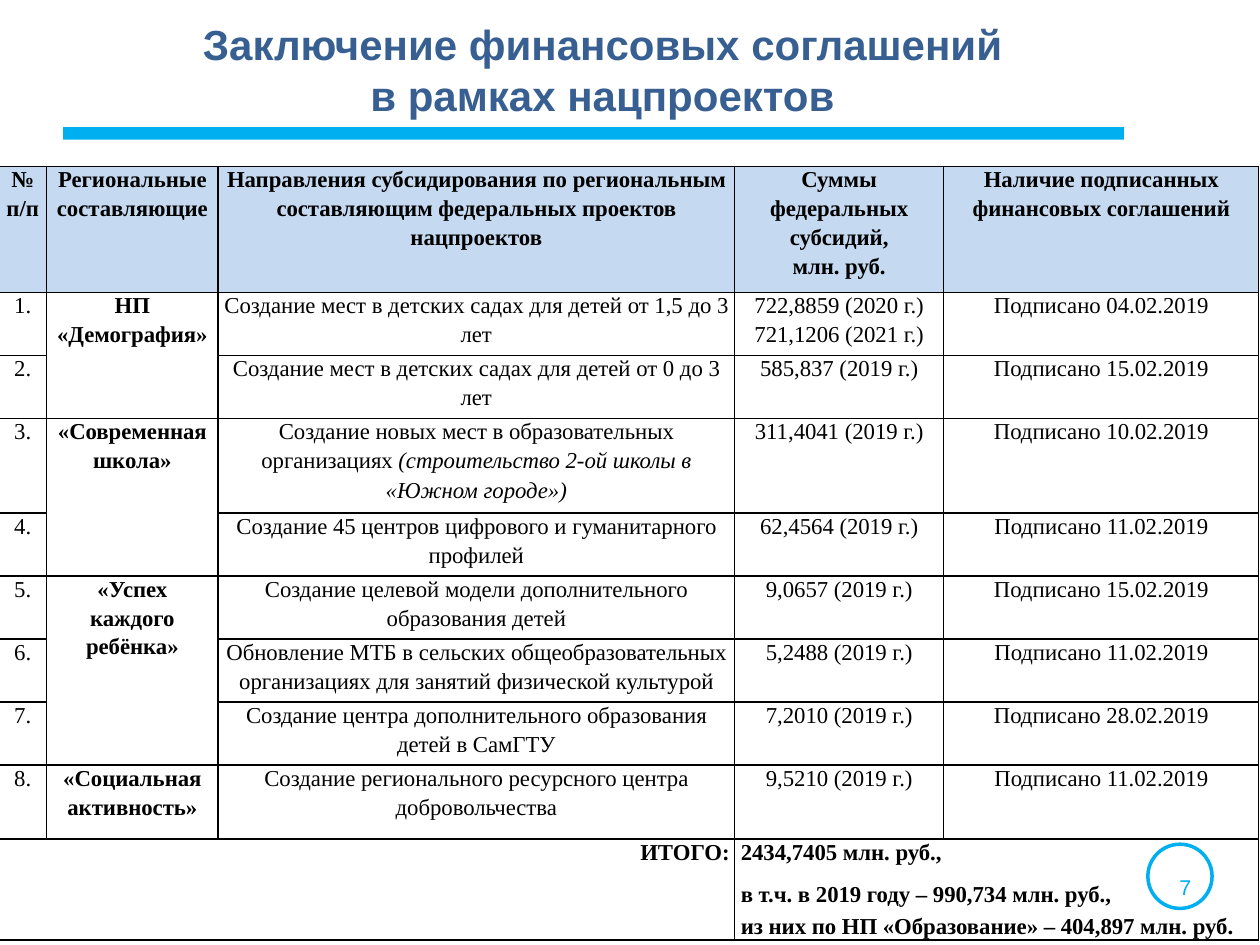
from lxml import etree
from pptx import Presentation
from pptx.dml.color import RGBColor
from pptx.enum.shapes import MSO_SHAPE
from pptx.enum.text import PP_ALIGN
from pptx.oxml.ns import qn
from pptx.util import Inches, Pt

RECTANGLE, OVAL = MSO_SHAPE.RECTANGLE, MSO_SHAPE.OVAL
LEFT, CENTER, RIGHT = PP_ALIGN.LEFT, PP_ALIGN.CENTER, PP_ALIGN.RIGHT
BLACK = RGBColor(0x00, 0x00, 0x00)
SKY = RGBColor(0x00, 0xAF, 0xEF)
NAVY = RGBColor(0x37, 0x5F, 0x92)
PALE_BLUE = RGBColor(0xC5, 0xD9, 0xF0)

COLUMN_WIDTHS = [0.38, 1.36, 4.1, 1.66, 2.5]
ROW_HEIGHTS = [1, 0.5, 0.5, 0.75, 0.5, 0.5, 0.5, 0.5, 0.59, 0.78]
HEADERS = [
    ["№", "п/п"],
    ["Региональные", "составляющие"],
    ["Направления субсидирования по региональным",
     "составляющим федеральных проектов\vнацпроектов"],
    ["Суммы", "федеральных\vсубсидий,\vмлн. руб."],
    ["Наличие подписанных", "финансовых соглашений"],
]
PROJECTS = [
    (1, 2, ["НП", "«Демография»"]),
    (3, 4, ["«Современная", "школа»"]),
    (5, 7, ["«Успех", "каждого\vребёнка»"]),
    (8, 8, ["«Социальная", "активность»"]),
]
AGREEMENTS = [
    (["Создание мест в детских садах для детей от 1,5 до 3", "лет"],
     ["722,8859 (2020 г.)", "721,1206 (2021 г.)"], "04.02.2019"),
    (["Создание мест в детских садах для детей от 0 до 3", "лет"],
     ["585,837 (2019 г.)"], "15.02.2019"),
    (["Создание новых мест в образовательных",
      "организациях _(строительство 2-ой школы в", "_«Южном городе»)"],
     ["311,4041 (2019 г.)"], "10.02.2019"),
    (["Создание 45 центров цифрового и гуманитарного", "профилей"],
     ["62,4564 (2019 г.)"], "11.02.2019"),
    (["Создание целевой модели дополнительного", "образования детей"],
     ["9,0657 (2019 г.)"], "15.02.2019"),
    (["Обновление МТБ в сельских общеобразовательных",
      "организациях для занятий физической культурой"],
     ["5,2488 (2019 г.)"], "11.02.2019"),
    (["Создание центра дополнительного образования", "детей в СамГТУ"],
     ["7,2010 (2019 г.)"], "28.02.2019"),
    (["Создание регионального ресурсного центра", "добровольчества"],
     ["9,5210 (2019 г.)"], "11.02.2019"),
]
TOTALS = [
    "2434,7405 млн. руб.,",
    "в т.ч. в 2019 году – 990,734 млн. руб.,\t",
    "из них по НП «Образование» – 404,897 млн. руб.",
]


def style_font(font, name, size, color, bold):
    font.name, font.size, font.bold = name, Pt(size), bold
    font.color.rgb = color


def add_decoration(page, kind, left, top, width, height):
    shape = page.shapes.add_shape(
        kind, Inches(left), Inches(top), Inches(width), Inches(height))
    shape.shadow.inherit = False
    shape.line.color.rgb = SKY
    return shape


def add_title(page, left, top, width, height):
    box = page.shapes.add_textbox(
        Inches(left), Inches(top), Inches(width), Inches(height))
    frame = box.text_frame
    frame.word_wrap = True
    frame.margin_left = frame.margin_right = frame.margin_bottom = 0
    frame.margin_top = Inches(0.01)
    para = frame.paragraphs[0]
    para.text = "Заключение финансовых соглашений в рамках нацпроектов"
    properties = para._p.get_or_add_pPr()
    properties.set("marL", str(Inches(1.35)))
    properties.set("indent", str(Inches(-1.33)))
    style_font(para.font, "Arial", 24, NAVY, True)


def add_border(cell):
    properties = cell._tc.get_or_add_tcPr()
    for side in ("a:lnL", "a:lnR", "a:lnT", "a:lnB"):
        line = etree.SubElement(properties, qn(side), w=str(Pt(1)))
        fill = etree.SubElement(line, qn("a:solidFill"))
        etree.SubElement(fill, qn("a:srgbClr"), val=str(BLACK))


def fill_cell(cell, lines, bold=False, align=CENTER, side_margin=0):
    cell.margin_left = cell.margin_right = Inches(side_margin)
    cell.margin_top, cell.margin_bottom = Inches(0.01), 0
    frame = cell.text_frame
    for index, line in enumerate(lines):
        para = frame.add_paragraph() if index else frame.paragraphs[0]
        para.alignment = align
        if index:
            para.space_before = Pt(2.4)
        if "\v" in line:
            para.line_spacing = 1.15
            para.space_before = Pt(0.1)
        if "_" in line:
            plain, italic = line.split("_")
            if plain:
                para.add_run().text = plain
            span = para.add_run()
            span.text = italic
            span.font.italic = True
        else:
            para.text = line
        style_font(para.font, "Times New Roman", 13, BLACK, bold)


def add_page_number(para):
    properties = para._p.get_or_add_pPr()
    tabs = etree.Element(qn("a:tabLst"))
    etree.SubElement(tabs, qn("a:tab"), pos=str(Inches(3.48)), algn="l")
    properties.find(qn("a:defRPr")).addprevious(tabs)
    span = para.add_run()
    span.text = "7"
    style_font(span.font, "Arial", 21, SKY, False)
    span._r.get_or_add_rPr().set("baseline", "20000")


def add_agreement_table(page, left, top):
    frame = page.shapes.add_table(
        len(ROW_HEIGHTS), len(COLUMN_WIDTHS), Inches(left), Inches(top),
        Inches(sum(COLUMN_WIDTHS)), Inches(sum(ROW_HEIGHTS)))
    table = frame.table
    table.first_row = table.horz_banding = False
    for column, width in zip(table.columns, COLUMN_WIDTHS):
        column.width = Inches(width)
    for row, height in zip(table.rows, ROW_HEIGHTS):
        row.height = Inches(height)
    for cell in table.iter_cells():
        add_border(cell)
        cell.fill.background()

    for index, lines in enumerate(HEADERS):
        cell = table.cell(0, index)
        cell.fill.solid()
        cell.fill.fore_color.rgb = PALE_BLUE
        fill_cell(cell, lines, bold=True)
    for first, last, lines in PROJECTS:
        if last > first:
            table.cell(first, 1).merge(table.cell(last, 1))
        fill_cell(table.cell(first, 1), lines, bold=True)
    for number, (purpose, sums, date) in enumerate(AGREEMENTS, 1):
        fill_cell(table.cell(number, 0), [f"{number}."])
        fill_cell(table.cell(number, 2), purpose)
        fill_cell(table.cell(number, 3), sums)
        fill_cell(table.cell(number, 4), [f"Подписано {date}"])

    bottom = len(ROW_HEIGHTS) - 1
    label, total = table.cell(bottom, 0), table.cell(bottom, 3)
    label.merge(table.cell(bottom, 2))
    total.merge(table.cell(bottom, 4))
    fill_cell(label, ["ИТОГО:"], True, RIGHT, 0.04)
    fill_cell(total, TOTALS, True, LEFT, 0.05)
    add_page_number(total.text_frame.paragraphs[1])


def main():
    deck = Presentation()
    deck.slide_width, deck.slide_height = Inches(10), Inches(7.5)
    page = deck.slides.add_slide(deck.slide_layouts[6])
    bar = add_decoration(page, RECTANGLE, 0.5, 1.01, 8.42, 0.1)
    bar.fill.solid()
    bar.fill.fore_color.rgb = SKY
    bar.line.fill.background()
    ring = add_decoration(page, OVAL, 9.11, 6.7, 0.51, 0.51)
    ring.fill.background()
    ring.line.width = Pt(2)
    add_agreement_table(page, -0.01, 1.32)
    add_title(page, 1.59, 0.14, 6.37, 0.83)
    deck.save("out.pptx")


if __name__ == "__main__":
    main()
